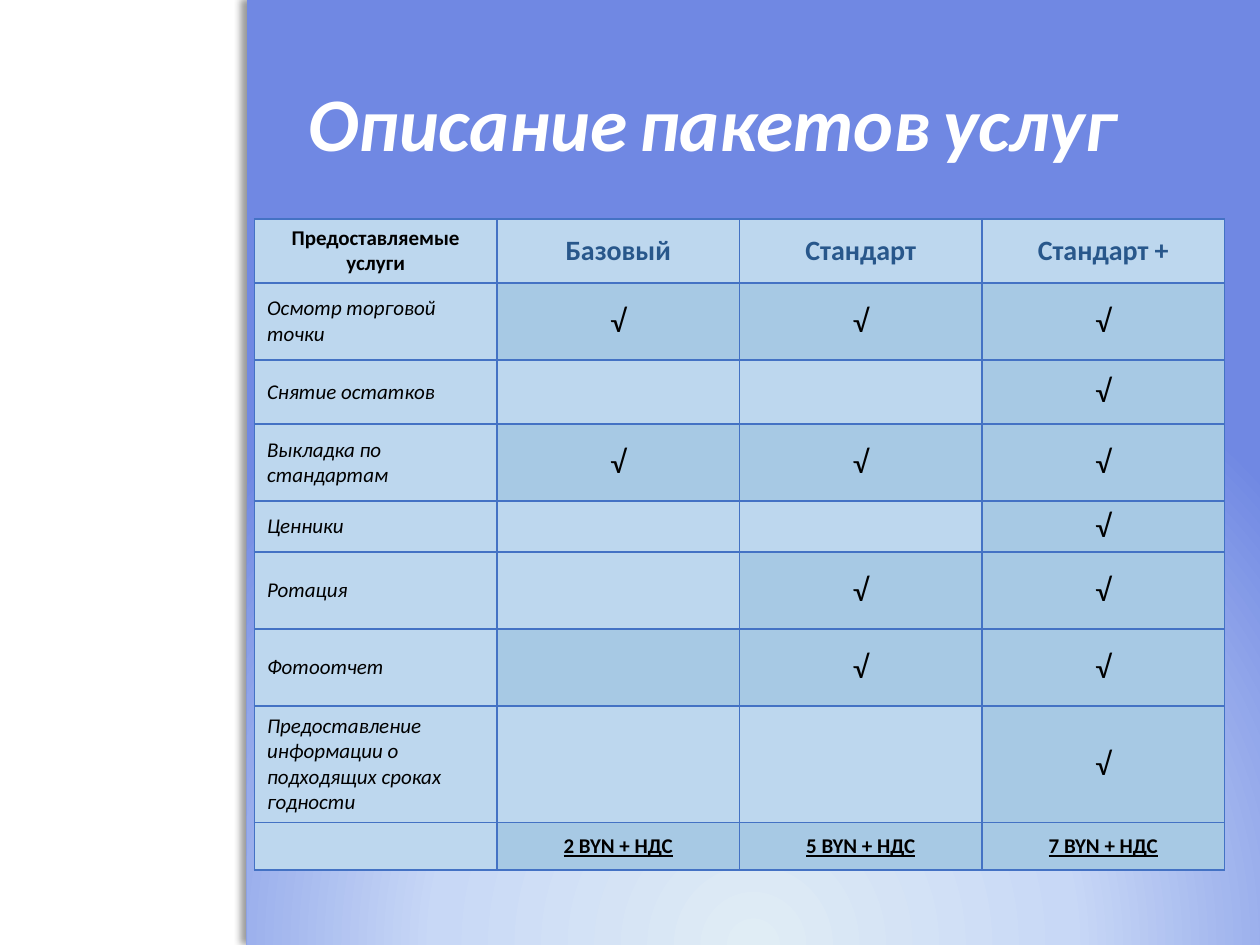
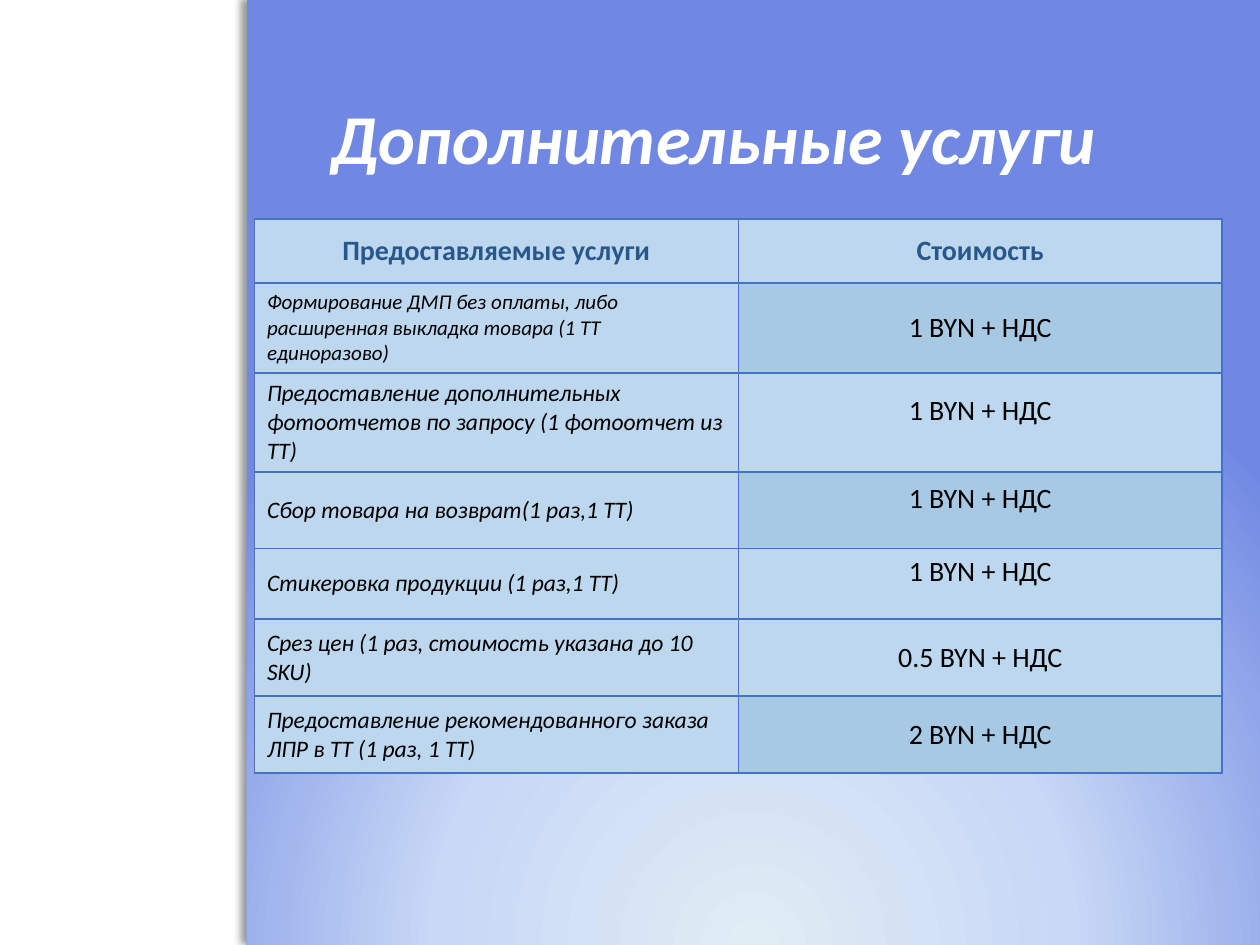
from lxml import etree
from pptx import Presentation
from pptx.dml.color import RGBColor
from pptx.enum.shapes import MSO_SHAPE
from pptx.enum.text import MSO_ANCHOR, PP_ALIGN
from pptx.oxml import parse_xml
from pptx.oxml.ns import nsdecls, qn
from pptx.util import Pt

FONT = "Calibri"
COLORS = {
    "white": "FFFFFF", "black": "000000", "heading": "28578B",
    "light": "BDD7EE", "dark": "A7C9E4", "border": "4472C4",
    "center": "E0EDF5", "middle": "C8D8F6", "edge": "7088E3",
}
STYLES = {
    "corner": {"size": 12, "bold": True, "color": "black"},
    "head": {"size": 16, "bold": True, "color": "heading"},
    "label": {"size": 12, "italic": True, "color": "black"},
    "service": {"size": 13.5, "italic": True, "color": "black"},
    "check": {"size": 18, "color": "black"},
    "price": {"size": 16, "color": "black"},
    "raised": {"size": 16, "color": "black"},
    "total": {"size": 12, "bold": True, "underline": True, "color": "black"},
    "title": {"size": 43.2, "bold": True, "italic": True, "color": "white"},
    "gap": {"size": 29.7, "color": "black"},
    "title2": {"size": 40, "bold": True, "italic": True, "color": "white"},
}
LEFT_STYLES = ("label", "service")
RAISE = 13

packages = [
    (36.8, "corner", "head", ["Предоставляемые услуги", "Базовый", "Стандарт", "Стандарт +"], ()),
    (44, "label", "check", ["Осмотр торговой точки", "√", "√", "√"], (1, 2, 3)),
    (36.6, "label", "check", ["Снятие остатков", "", "", "√"], (3,)),
    (44, "label", "check", ["Выкладка по стандартам", "√", "√", "√"], (1, 2, 3)),
    (29.1, "label", "check", ["Ценники", "", "", "√"], (3,)),
    (44, "label", "check", ["Ротация", "", "√", "√"], (2, 3)),
    (44, "label", "check", ["Фотоотчет", "", "√", "√"], (1, 2, 3)),
    (66.6, "label", "check",
     ["Предоставление информации о подходящих сроках годности", "", "", "√"], (3,)),
    (27.2, "label", "total", ["", "2 BYN + НДС", "5 BYN + НДС", "7 BYN + НДС"], (1, 2, 3)),
]
extras = [
    (36.8, "head", "head", ["Предоставляемые услуги", "Стоимость"], ()),
    (51.4, "label", "price",
     ["Формирование ДМП без оплаты, либо расширенная выкладка товара (1 ТТ единоразово)",
      "1 BYN + НДС"], (1,)),
    (56.6, "service", "raised",
     ["Предоставление дополнительных фотоотчетов по запросу (1 фотоотчет из ТТ)",
      "1 BYN + НДС"], ()),
    (43.6, "service", "raised", ["Сбор товара на возврат(1 раз,1 ТТ)", "1 BYN + НДС"], (1,)),
    (40.4, "service", "raised", ["Стикеровка продукции (1 раз,1 ТТ)", "1 BYN + НДС"], ()),
    (44, "service", "price",
     ["Срез цен (1 раз, стоимость указана до 10 SKU)", "0.5 BYN + НДС"], ()),
    (44, "service", "price",
     ["Предоставление рекомендованного заказа ЛПР в ТТ (1 раз, 1 ТТ)", "2 BYN + НДС"], (1,)),
]
title_runs = [("Описание", "title"), (" ", "gap"), ("пакетов", "title"),
              (" ", "gap"), ("услуг", "title")]
slides = [
    (title_runs, (144, 28.8, 526.3, 87.8), packages, 554.4),
    ([("Дополнительные услуги", "title2")], (145.4, 28.8, 524.9, 104.4), extras, 553),
]


def add_run(p, text, style):
    r = p.add_run()
    r.text = text
    r.font.name = FONT
    formats = {"bold": False, "italic": False, **STYLES[style]}
    r.font.color.rgb = RGBColor.from_string(COLORS[formats.pop("color")])
    formats["size"] = Pt(formats["size"])
    for name, value in formats.items():
        setattr(r.font, name, value)


def add_panel(s):
    sp = s.shapes.add_shape(MSO_SHAPE.RECTANGLE, Pt(141.1), 0, Pt(578.9), Pt(540))
    sp.line.fill.background()
    stops = "".join(
        f'<a:gs pos="{pos}"><a:srgbClr val="{COLORS[name]}"/></a:gs>'
        for pos, name in ((0, "center"), (46000, "middle"), (100000, "edge")))
    spPr = sp.fill._xPr
    spPr.find(qn("a:prstGeom")).addnext(parse_xml(
        f'<a:gradFill {nsdecls("a")} rotWithShape="1"><a:gsLst>{stops}</a:gsLst>'
        '<a:path path="circle"><a:fillToRect l="50000" t="130000" r="50000" b="-30000"/>'
        '</a:path></a:gradFill>'))
    spPr.append(parse_xml(
        f'<a:effectLst {nsdecls("a")}><a:outerShdw blurRad="{Pt(4)}" dist="{Pt(3)}" '
        f'dir="10800000" rotWithShape="0"><a:srgbClr val="{COLORS["black"]}">'
        '<a:alpha val="40000"/></a:srgbClr></a:outerShdw></a:effectLst>'))


prs = Presentation()
prs.slide_width, prs.slide_height = Pt(720), Pt(540)

for runs, box, rows, width in slides:
    s = prs.slides.add_slide(prs.slide_layouts[6])
    add_panel(s)

    tf = s.shapes.add_textbox(*map(Pt, box)).text_frame
    tf.word_wrap = True
    tf.vertical_anchor = MSO_ANCHOR.MIDDLE
    p = tf.paragraphs[0]
    p.alignment = PP_ALIGN.CENTER
    p.line_spacing = 0.9
    for text, style in runs:
        add_run(p, text, style)

    n_cols = len(rows[0][3])
    height = sum(row[0] for row in rows)
    table = s.shapes.add_table(len(rows), n_cols, Pt(145.4), Pt(125),
                               Pt(width), Pt(height)).table
    table.first_row = table.horz_banding = False
    for col in table.columns:
        col.width = Pt(width / n_cols)

    for i, (row_height, first_style, value_style, texts, dark) in enumerate(rows):
        table.rows[i].height = Pt(row_height)
        for j, text in enumerate(texts):
            style = value_style if j else first_style
            cell = table.cell(i, j)
            cell.vertical_anchor = MSO_ANCHOR.MIDDLE
            if style == "raised":
                cell.margin_bottom = Pt(3.6 + RAISE)
            tcPr = cell._tc.get_or_add_tcPr()
            for side in ("lnL", "lnR", "lnT", "lnB"):
                ln = etree.SubElement(tcPr, qn(f"a:{side}"), w=str(Pt(1)))
                fill = etree.SubElement(ln, qn("a:solidFill"))
                etree.SubElement(fill, qn("a:srgbClr"), val=COLORS["border"])
            cell.fill.solid()
            cell.fill.fore_color.rgb = RGBColor.from_string(
                COLORS["dark" if j in dark else "light"])
            p = cell.text_frame.paragraphs[0]
            p.alignment = PP_ALIGN.LEFT if style in LEFT_STYLES else PP_ALIGN.CENTER
            if text:
                add_run(p, text, style)
            else:
                etree.SubElement(p._p, qn("a:endParaRPr"), sz="1200")

prs.save("out.pptx")
